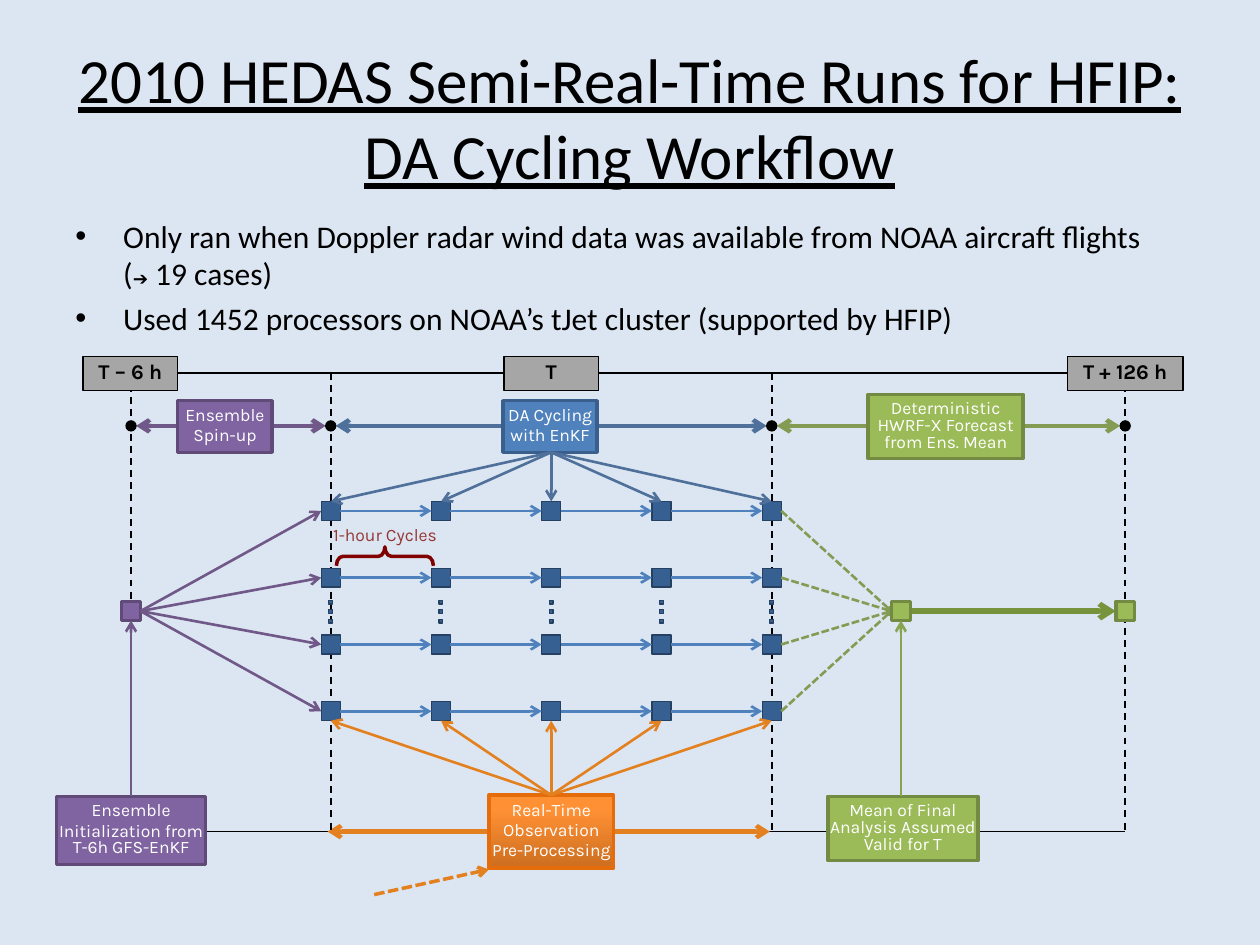
import pptx
import pptx.dml.color
import pptx.enum.dml
import pptx.enum.shapes
import pptx.enum.text
import pptx.oxml.ns
import pptx.util
from lxml import etree

Inches, Pt = pptx.util.Inches, pptx.util.Pt
color = pptx.dml.color.RGBColor.from_string
qn = pptx.oxml.ns.qn
SHAPE = pptx.enum.shapes.MSO_SHAPE
DASH = pptx.enum.dml.MSO_LINE.DASH
SHORT_DASH = pptx.enum.dml.MSO_LINE.SQUARE_DOT
CENTER = pptx.enum.text.PP_ALIGN.CENTER
MIDDLE = pptx.enum.text.MSO_ANCHOR.MIDDLE

PURPLE, PURPLE_EDGE, PURPLE_ARROW = "8064A2", "5F4A78", "705988"
GREEN, GREEN_EDGE, GREEN_ARROW = "9BBB59", "738A42", "849B54"
BLUE, BLUE_EDGE, BLUE_ARROW = "4F81BD", "3A5F8C", "4F709A"
NODE, NODE_EDGE, ORANGE = "376092", "254061", "E38121"
BLACK, WHITE, GRAY = "000000", "FFFFFF", "A6A6A6"

# Grid: five hourly analysis columns and four ensemble rows
columns = [2.625 + 0.875 * i for i in range(5)]
rows = [4.055 + 0.53 * i for i in range(4)]
SIDE = 0.15
HALF = SIDE / 2
start_x, mean_x, end_x = 1.04, 7.15, 8.93
middle_x, middle_y = columns[2], sum(rows) / 4
time_y, phase_y, bottom_y = 2.96, 3.38, 6.6
cycle_bottom, observation_top, input_top = 3.59, 6.31, 6.32
time_marks = [start_x, columns[0], columns[-1], end_x]

deck = pptx.Presentation()
deck.slide_width, deck.slide_height = Inches(10), Inches(7.5)
page = deck.slides.add_slide(deck.slide_layouts[6])
page.background.fill.solid()
page.background.fill.fore_color.rgb = color("DCE6F2")


def draw_line(start, end, hue, width=1.5, dash=None, head=None, tail="arrow"):
    """Connect two (x, y) points; head is the mark at start, tail at end."""
    line = page.shapes.add_connector(
        pptx.enum.shapes.MSO_CONNECTOR.STRAIGHT,
        *(Inches(value) for value in (*start, *end)))
    line.line.color.rgb = color(hue)
    line.line.width = Pt(width)
    if dash:
        line.line.dash_style = dash
    for tag, mark in (("a:headEnd", head), ("a:tailEnd", tail)):
        if mark:
            etree.SubElement(line.line._get_or_add_ln(), qn(tag), type=mark)
    etree.SubElement(line._element.spPr, qn("a:effectLst"))


def draw_box(place, fill, edge, width=2, texts=(), size=10, ink=WHITE,
             bold=False, kind=SHAPE.RECTANGLE):
    """Draw a shape at (left, top, width, height), one paragraph per text."""
    box = page.shapes.add_shape(kind, *(Inches(value) for value in place))
    box.shadow.inherit = False
    if fill:
        box.fill.solid()
        box.fill.fore_color.rgb = color(fill)
    else:
        box.fill.background()
    if edge:
        box.line.color.rgb = color(edge)
        box.line.width = Pt(width)
    else:
        box.line.fill.background()
    frame = box.text_frame
    frame.word_wrap = True
    frame.vertical_anchor = MIDDLE
    frame.margin_left = frame.margin_right = 0
    for index, text in enumerate(texts):
        para = frame.add_paragraph() if index else frame.paragraphs[0]
        para.alignment = CENTER
        para.line_spacing = 0.8
        para.space_before = Pt(size * 0.2)
        span = para.add_run()
        span.text = text
        span.font.name, span.font.size, span.font.bold = "Karla", Pt(size), bold
        span.font.color.rgb = color(ink)
    return box


# Title
title = page.shapes.add_textbox(Inches(0.5), Inches(0.3), Inches(9), Inches(1.25))
title.text_frame.word_wrap = True
title.text_frame.vertical_anchor = MIDDLE
para = title.text_frame.paragraphs[0]
para.alignment = CENTER
for index, text in enumerate(["2010 HEDAS Semi-Real-Time Runs for HFIP:",
                              "DA Cycling Workflow"]):
    if index:
        para.add_line_break()
    span = para.add_run()
    span.text = text
    span.font.name, span.font.size, span.font.underline = "Calibri", Pt(36), True
    span.font.color.rgb = color(BLACK)

# Bullets: each run is (text, font, size), None breaks the line
bullets = [
    [("Only ran when Doppler radar wind data was available from NOAA aircraft flights",
      "Calibri", 18), None,
     ("(", "Calibri", 18), ("➔", "Arial", 10.5), (" 19 cases)", "Calibri", 18)],
    [("Used 1452 processors on NOAA’s tJet cluster (supported by HFIP)",
      "Calibri", 18)],
]
body = page.shapes.add_textbox(Inches(0.5), Inches(1.67), Inches(9), Inches(1.1))
body.text_frame.word_wrap = True
for index, runs in enumerate(bullets):
    para = body.text_frame.add_paragraph() if index else body.text_frame.paragraphs[0]
    para.space_before = Pt(4)
    layout = para._p.get_or_add_pPr()
    layout.set("marL", str(Inches(0.38)))
    layout.set("indent", str(-Inches(0.38)))
    etree.SubElement(layout, qn("a:buFont"), typeface="Arial")
    etree.SubElement(layout, qn("a:buChar"), char="•")
    for run in runs:
        if run is None:
            para.add_line_break()
            continue
        span = para.add_run()
        span.text, span.font.name = run[:2]
        span.font.size = Pt(run[2])
        span.font.color.rgb = color(BLACK)

# Time axes
draw_line((start_x, bottom_y), (end_x, bottom_y), BLACK, 1, tail=None)
draw_line((2.6, bottom_y), (6.11, bottom_y), ORANGE, 2.5, head="arrow")
for x in time_marks:
    draw_line((x, time_y), (x, bottom_y), BLACK, 1, DASH, tail=None)
draw_line((start_x, time_y), (end_x, time_y), BLACK, 1, tail=None)

# Ensemble members: fan out, hourly cycles, fan in
draw_box((start_x - HALF, middle_y - HALF, SIDE, SIDE), PURPLE, PURPLE_EDGE)
for y in rows:
    draw_line((start_x + HALF, middle_y), (columns[0] - HALF, y), PURPLE_ARROW)
    for x in columns:
        draw_box((x - HALF, y - HALF, SIDE, SIDE), NODE, NODE_EDGE, 0.75)
    for x, following in zip(columns, columns[1:]):
        draw_line((x + HALF, y), (following - HALF, y), BLUE)
    draw_line((columns[-1] + HALF, y), (mean_x - HALF, middle_y),
              GREEN_ARROW, 1.5, SHORT_DASH, tail="oval")
for x in columns:
    for step in (-1, 0, 1):
        draw_box((x - 0.015, middle_y + step * 0.075 - 0.01, 0.03, 0.03),
                 NODE, NODE_EDGE, 0.75)

# Ensemble mean and forecast
draw_line((mean_x + HALF, middle_y), (end_x - HALF, middle_y), "77933C", 3)
for x in (mean_x, end_x):
    draw_box((x - HALF, middle_y - HALF, SIDE, SIDE), GREEN, GREEN_EDGE)

# Time labels
for left, width, label in [(0.66, 0.75, "T – 6 h"), (4, 0.75, "T"),
                           (8.47, 0.92, "T + 126 h")]:
    draw_box((left, 2.83, width, 0.27), GRAY, BLACK, 0.75, [label], 12, BLACK, True)

# Phases between the time marks
for left, right, hue in zip(time_marks, time_marks[1:],
                            [PURPLE_ARROW, BLUE_ARROW, GREEN_ARROW]):
    draw_line((left + 0.04, phase_y), (right - 0.04, phase_y), hue, 2.5, head="arrow")
for x in time_marks:
    draw_box((x - 0.04, phase_y - 0.04, 0.08, 0.08), BLACK, BLACK, 0.75,
             kind=SHAPE.OVAL)

# Phase and input labels
for place, fill, edge, texts in [
    ((1.41, 3.18, 0.75, 0.41), PURPLE, PURPLE_EDGE, ["Ensemble", "Spin-up"]),
    ((3.99, 3.18, 0.75, 0.41), BLUE, BLUE_EDGE, ["DA Cycling", "with EnKF"]),
    ((6.89, 3.13, 1.23, 0.51), GREEN, GREEN_EDGE,
     ["Deterministic HWRF-X Forecast from Ens. Mean"]),
    ((0.45, input_top, 1.18, 0.54), PURPLE, PURPLE_EDGE,
     ["Ensemble", "Initialization from T-6h GFS-EnKF"]),
    ((6.57, input_top, 1.19, 0.51), GREEN, GREEN_EDGE,
     ["Mean of Final Analysis Assumed Valid for T"]),
]:
    draw_box(place, fill, edge, 2, texts)
observations = draw_box((3.88, observation_top, 0.99, 0.58), ORANGE, "E46C0A", 2,
                        ["Real-Time", "Observation", "Pre-Processing"])
observations.fill.gradient()
observations.fill.gradient_angle = 90
for stop, position, hue in zip(observations.fill.gradient_stops,
                               (0, 0.8), ("CC6E20", "FF9034")):
    stop.position = position
    stop.color.rgb = color(hue)

# Arrows from the labels into the grid
draw_line((2.97, 7.1), (3.88, 6.9), ORANGE, 2, SHORT_DASH)
for x in columns:
    draw_line((middle_x, observation_top), (x, rows[-1] + HALF), ORANGE)
    draw_line((middle_x, cycle_bottom), (x, rows[0] - HALF), BLUE_ARROW)
for x, hue in ((start_x, PURPLE_ARROW), (mean_x, "89A451")):
    draw_line((x, input_top), (x, middle_y + HALF), hue)

# One-hour cycle brace
brace = draw_box((2.98, 4.03, 0.15, 0.77), None, "800000", kind=SHAPE.RIGHT_BRACE)
brace.rotation = 270
brace.adjustments[0] = 0.34
draw_box((2.61, 4.14, 0.89, 0.24), None, None, texts=["1-hour Cycles"], ink="953735")

deck.save("out.pptx")
